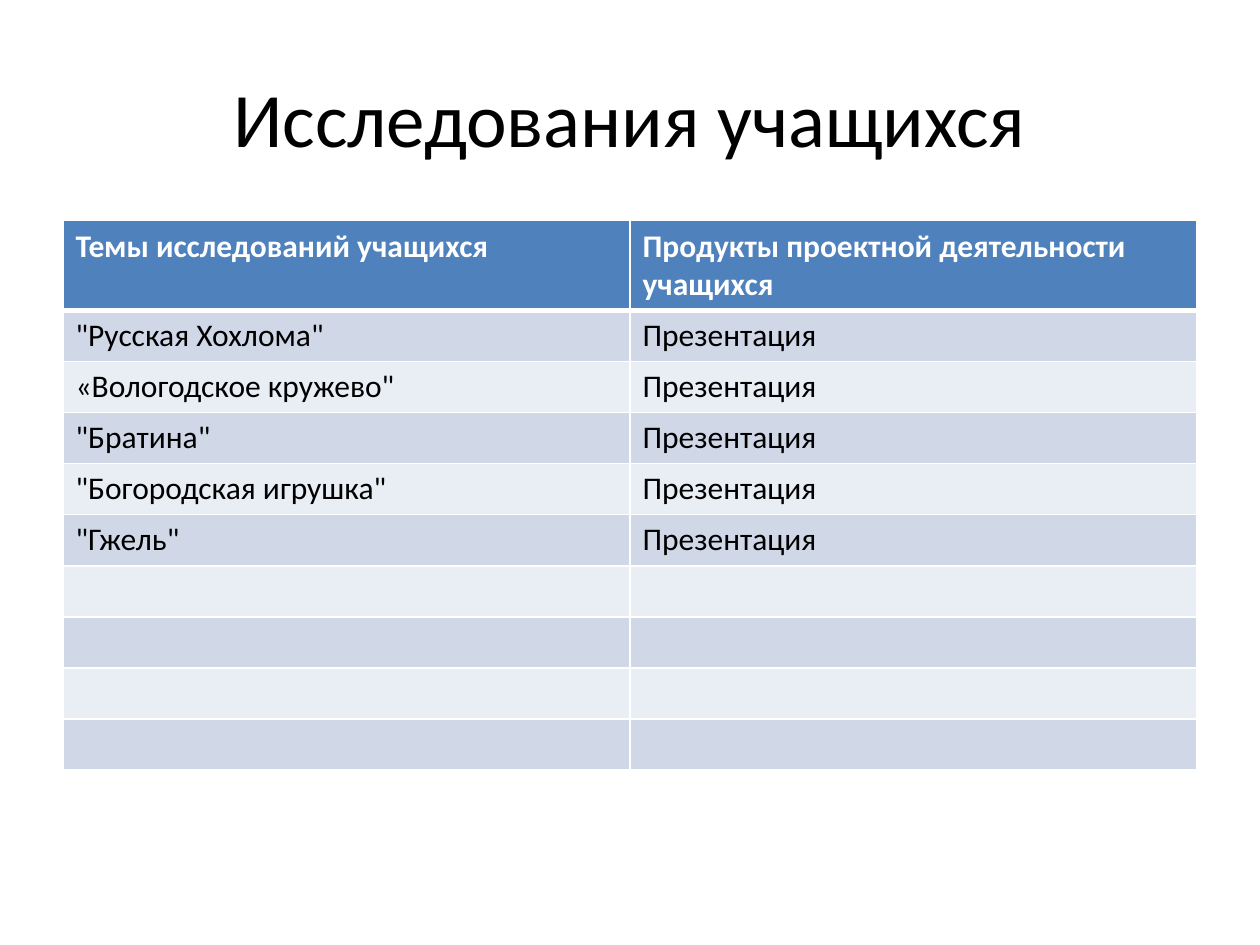
from dataclasses import dataclass

from lxml.etree import SubElement
from pptx import Presentation
from pptx.dml.color import RGBColor as RGB
from pptx.enum.text import MSO_ANCHOR as Anchor, PP_ALIGN as Align
from pptx.oxml.ns import qn
from pptx.util import Cm, Pt


@dataclass(frozen=True)
class Theme:
    font: str = "Calibri"
    title_size: int = 44
    table_size: int = 18
    text: str = "000000"
    header_text: str = "FFFFFF"
    header_fill: str = "4F81BD"
    bands: tuple = ("D0D8E8", "E9EDF4")
    border: str = "FFFFFF"
    thin: int = 1
    thick: int = 3


THEME = Theme()
TITLE = "Исследования учащихся"
HEADERS = ("Темы исследований учащихся", "Продукты проектной деятельности учащихся")
TOPICS = ('"Русская Хохлома"', '«Вологодское кружево"', '"Братина"',
          '"Богородская игрушка"', '"Гжель"')
PRODUCT = "Презентация"
EMPTY_ROWS = 4
ROW_HEIGHT = 1.03


def add_run(paragraph, text, size, color, bold=False):
    run = paragraph.add_run()
    run.text = text
    run.font.name = THEME.font
    run.font.size = Pt(size)
    run.font.bold = bold
    run.font.color.rgb = RGB.from_string(color)


def set_borders(cell, top, bottom):
    properties = cell._tc.get_or_add_tcPr()
    widths = {"L": THEME.thin, "R": THEME.thin, "T": top, "B": bottom}
    for side, width in widths.items():
        line = SubElement(properties, qn(f"a:ln{side}"), w=str(Pt(width)))
        fill = SubElement(line, qn("a:solidFill"))
        SubElement(fill, qn("a:srgbClr"), val=THEME.border)


def place_title(slide, left, top, width, height):
    title = slide.shapes.title
    title.left, title.top = Cm(left), Cm(top)
    title.width, title.height = Cm(width), Cm(height)
    title.text_frame.vertical_anchor = Anchor.MIDDLE
    paragraph = title.text_frame.paragraphs[0]
    paragraph.alignment = Align.CENTER
    add_run(paragraph, TITLE, THEME.title_size, THEME.text)


def place_table(slide, left, top, width, height):
    rows = [HEADERS, *((topic, PRODUCT) for topic in TOPICS)]
    rows += [("", "")] * EMPTY_ROWS
    table = slide.shapes.add_table(len(rows), len(HEADERS), Cm(left), Cm(top),
                                   Cm(width), Cm(height)).table

    # The header takes the height left over by the equal body rows
    for index, row in enumerate(table.rows):
        row.height = Cm(ROW_HEIGHT if index else height - ROW_HEIGHT * (len(rows) - 1))

    for row_index, texts in enumerate(rows):
        is_header = row_index == 0
        fill = THEME.header_fill if is_header else THEME.bands[(row_index - 1) % 2]
        color = THEME.header_text if is_header else THEME.text
        for column_index, text in enumerate(texts):
            cell = table.cell(row_index, column_index)
            # A thick line parts the header from the body
            set_borders(cell,
                        top=THEME.thick if row_index == 1 else THEME.thin,
                        bottom=THEME.thick if is_header else THEME.thin)
            cell.fill.solid()
            cell.fill.fore_color.rgb = RGB.from_string(fill)
            if text:
                add_run(cell.text_frame.paragraphs[0], text, THEME.table_size,
                        color, bold=is_header)


def main():
    presentation = Presentation()
    presentation.slide_width, presentation.slide_height = Cm(25.4), Cm(19.05)
    slide = presentation.slides.add_slide(presentation.slide_layouts[5])
    place_title(slide, 1.27, 0.76, 22.86, 3.18)
    place_table(slide, 1.27, 4.45, 22.86, 11.05)
    presentation.save("out.pptx")


if __name__ == "__main__":
    main()
